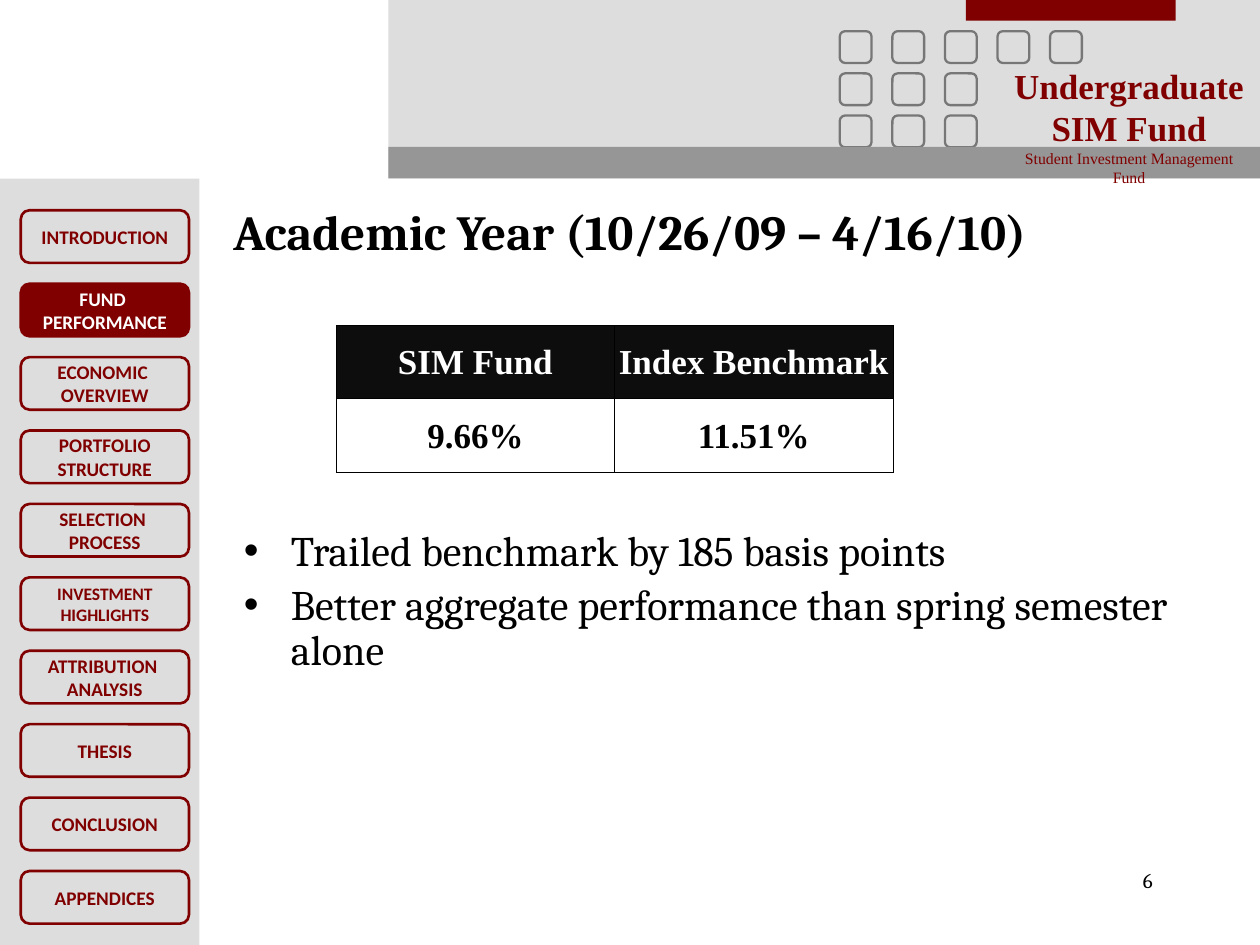
import pptx
import pptx.dml.color
import pptx.enum.shapes
import pptx.enum.text
import pptx.oxml
import pptx.oxml.ns
import pptx.util

Cm = pptx.util.Cm
Pt = pptx.util.Pt
rgb = pptx.dml.color.RGBColor.from_string
Preset = pptx.enum.shapes.MSO_SHAPE
Align = pptx.enum.text.PP_ALIGN
Anchor = pptx.enum.text.MSO_ANCHOR
AutoSize = pptx.enum.text.MSO_AUTO_SIZE

MAROON = "800000"
BLACK = "000000"
WHITE = "FFFFFF"
PALE_GRAY = "DDDDDD"

deck = pptx.Presentation()
deck.slide_width = Cm(25.4)
deck.slide_height = Cm(19.05)
slide = deck.slides.add_slide(deck.slide_layouts[1])


def draw(preset, left, top, width, height, fill=None, line=None, weight=1.5):
    shape = slide.shapes.add_shape(preset, Cm(left), Cm(top), Cm(width), Cm(height))
    shape.shadow.inherit = False
    if fill:
        shape.fill.solid()
        shape.fill.fore_color.rgb = rgb(fill)
    else:
        shape.fill.background()
    if line:
        shape.line.color.rgb = rgb(line)
        shape.line.width = Pt(weight)
    else:
        shape.line.fill.background()
    return shape


def write(paragraph, text, size, font, color, bold=False, align=Align.CENTER):
    paragraph.alignment = align
    run = paragraph.add_run()
    run.text = text
    run.font.size = Pt(size)
    run.font.name = font
    run.font.bold = bold
    run.font.color.rgb = rgb(color)


draw(Preset.RECTANGLE, 7.83, 0, 17.57, 3.6, PALE_GRAY)
for row, count in enumerate([5, 3, 3]):
    for column in range(count):
        draw(Preset.FLOWCHART_ALTERNATE_PROCESS, 16.93 + 1.06 * column,
             0.63 + 0.85 * row, 0.64, 0.64, line="777777", weight=1.3)
draw(Preset.RECTANGLE, 19.47, 0, 4.23, 0.42, MAROON)
draw(Preset.RECTANGLE, 7.83, 2.96, 17.57, 0.64, "969696")
draw(Preset.RECTANGLE, 0, 3.6, 4.02, 15.45, PALE_GRAY)

fund_name = slide.shapes.add_textbox(Cm(20.32), Cm(1.3), Cm(4.88), Cm(2.08)).text_frame
fund_name.word_wrap = True
fund_name.margin_left = fund_name.margin_right = 0
fund_name.margin_top = fund_name.margin_bottom = 0
write(fund_name.paragraphs[0], "Undergraduate", 20, "Times New Roman", MAROON, True)
write(fund_name.add_paragraph(), "SIM Fund", 20, "Times New Roman", MAROON, True)
write(fund_name.add_paragraph(), "Student Investment Management Fund", 9,
      "Times New Roman", MAROON)

sections = [
    ["INTRODUCTION"],
    ["FUND ", "PERFORMANCE"],
    ["ECONOMIC ", "OVERVIEW"],
    ["PORTFOLIO", "STRUCTURE"],
    ["SELECTION ", "PROCESS"],
    ["INVESTMENT", "HIGHLIGHTS"],
    ["ATTRIBUTION ", "ANALYSIS"],
    ["THESIS"],
    ["CONCLUSION"],
    ["APPENDICES"],
]
for position, words in enumerate(sections):
    current = "PERFORMANCE" in words
    button = draw(Preset.FLOWCHART_ALTERNATE_PROCESS, 0.42, 4.24 + 1.48 * position,
                  3.39, 1.06, MAROON if current else None, MAROON)
    label = button.text_frame
    label.word_wrap = False
    label.vertical_anchor = Anchor.MIDDLE
    for number, word in enumerate(words):
        paragraph = label.add_paragraph() if number else label.paragraphs[0]
        write(paragraph, word, 10 if "INVESTMENT" in words else 11, "Calibri",
              WHITE if current else MAROON, True)

title = slide.shapes.title
title.left, title.top, title.width, title.height = Cm(4.45), Cm(3.6), Cm(19.69), Cm(2.12)
title.text_frame.auto_size = AutoSize.NONE
title.text_frame.vertical_anchor = Anchor.MIDDLE
write(title.text_frame.paragraphs[0], "Academic Year (10/26/09 – 4/16/10)", 28,
      "Cambria", BLACK, True, Align.LEFT)

findings = slide.placeholders[1]
findings.left, findings.top = Cm(4.66), Cm(10.56)
findings.width, findings.height = Cm(19.9), Cm(6.59)
findings.text_frame.auto_size = AutoSize.NONE
for number, finding in enumerate([
    "Trailed benchmark by 185 basis points",
    "Better aggregate performance than spring semester alone",
]):
    frame = findings.text_frame
    paragraph = frame.add_paragraph() if number else frame.paragraphs[0]
    properties = paragraph._p.get_or_add_pPr()
    properties.set("marL", str(Cm(0.95)))
    properties.set("indent", str(Cm(-0.95)))
    paragraph.line_spacing = 0.9
    paragraph.space_before = Pt(5 * number)
    write(paragraph, finding, 24, "Cambria", BLACK, align=Align.LEFT)

page = slide.shapes.add_textbox(Cm(18.2), Cm(17.36), Cm(5.29), Cm(1.27)).text_frame
page.word_wrap = True
write(page.paragraphs[0], "6", 12, "Cambria", BLACK, align=Align.RIGHT)

returns = slide.shapes.add_table(2, 2, Cm(6.78), Cm(6.56), Cm(11.22), Cm(2.96)).table
returns.horz_banding = False
for row, values in enumerate([["SIM Fund", "Index Benchmark"], ["9.66%", "11.51%"]]):
    returns.rows[row].height = Cm(1.48)
    for column, value in enumerate(values):
        cell = returns.cell(row, column)
        cell.vertical_anchor = Anchor.MIDDLE
        cell.margin_left = cell.margin_right = cell.margin_top = Cm(0.03)
        cell.margin_bottom = 0
        if row:
            cell.fill.background()
        else:
            cell.fill.solid()
            cell.fill.fore_color.rgb = rgb("0D0D0D")
        write(cell.text_frame.paragraphs[0], value, 20, "Times New Roman",
              BLACK if row else WHITE, True)
        cell_properties = cell._tc.get_or_add_tcPr()
        for order, side in enumerate(["lnL", "lnR", "lnT", "lnB"]):
            border = pptx.oxml.parse_xml(
                f'<a:{side} {pptx.oxml.ns.nsdecls("a")} w="{Pt(0.5)}">'
                f'<a:solidFill><a:srgbClr val="{BLACK}"/></a:solidFill></a:{side}>')
            cell_properties.insert(order, border)

deck.save("out.pptx")
